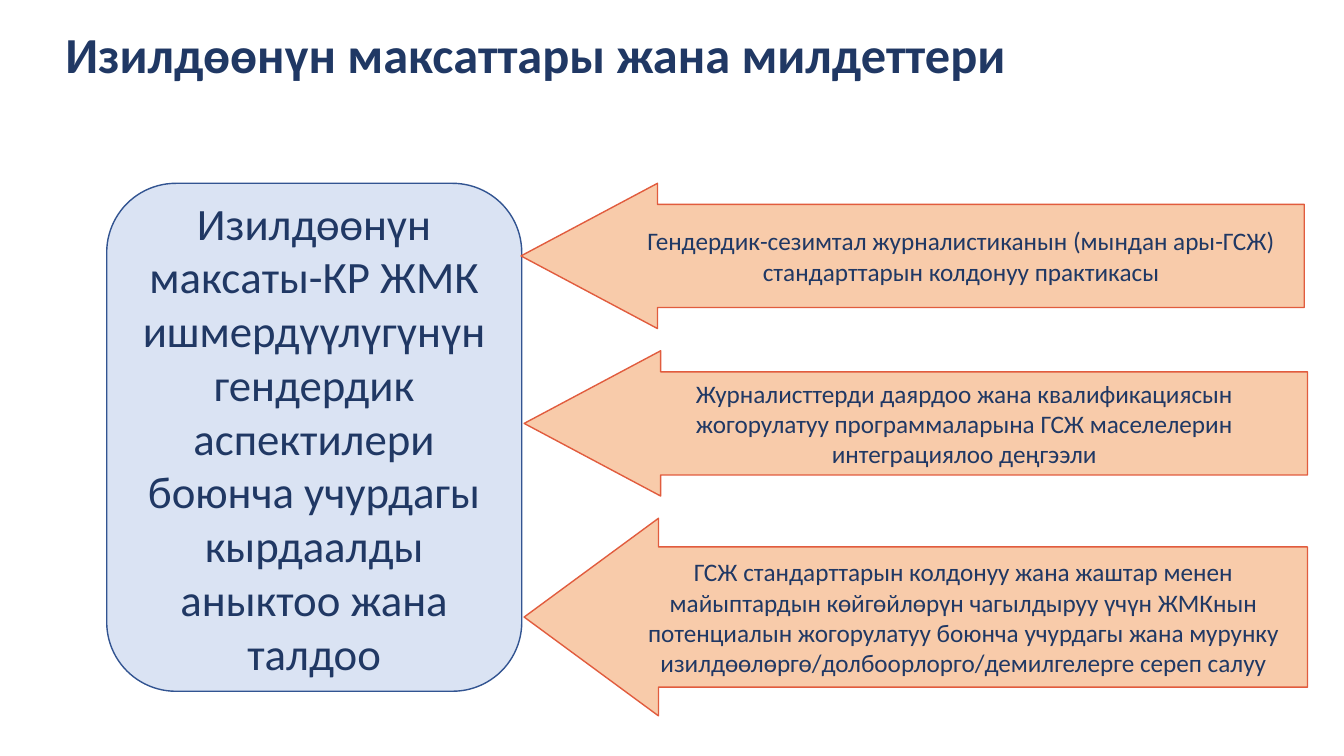
from pptx import Presentation
from pptx.dml.color import RGBColor
from pptx.enum.shapes import MSO_SHAPE
from pptx.enum.text import MSO_ANCHOR, MSO_AUTO_SIZE, PP_ALIGN
from pptx.util import Cm, Pt

COLORS = {
    "text": "203864",
    "goal_fill": "DAE3F3",
    "goal_line": "325491",
    "task_fill": "F8CBAA",
    "task_line": "E15C3E",
}

TITLE = "Изилдөөнүн максаттары жана милдеттери"
GOAL = ("Изилдөөнүн максаты-КР ЖМК ишмердүүлүгүнүн гендердик аспектилери "
        "боюнча учурдагы кырдаалды аныктоо жана талдоо")

# Left edge (cm), height (cm), head length relative to height, text
TASKS = [
    (13.13, 3.66, 0.94,
     "Гендердик-сезимтал журналистиканын (мындан ары-ГСЖ) "
     "стандарттарын колдонуу практикасы"),
    (13.21, 3.66, 0.94,
     "Журналисттерди даярдоо жана квалификациясын жогорулатуу "
     "программаларына ГСЖ маселелерин интеграциялоо деңгээли"),
    (13.21, 4.98, 0.68,
     "ГСЖ стандарттарын колдонуу жана жаштар менен майыптардын "
     "көйгөйлөрүн чагылдыруу үчүн ЖМКнын потенциалын жогорулатуу боюнча "
     "учурдагы жана мурунку изилдөөлөргө/долбоорлорго/демилгелерге "
     "сереп салуу"),
]
TOP = 4.62
TASK_WIDTH = 19.74
TASK_GAP = 0.56
SHAFT = 0.71


def color(name):
    return RGBColor.from_string(COLORS[name])


def set_text(tf, text, size, bold=False, align=PP_ALIGN.LEFT):
    tf.word_wrap = True
    tf.text = text
    p = tf.paragraphs[0]
    p.alignment = align
    font = p.runs[0].font
    font.name = "Calibri"
    font.size = Pt(size)
    font.bold = bold
    font.color.rgb = color("text")


def add_title(s, text):
    tf = s.shapes.add_textbox(Cm(1.4), Cm(0.46), Cm(25.96), Cm(1.8)).text_frame
    set_text(tf, text, 36, bold=True)
    tf.auto_size = MSO_AUTO_SIZE.SHAPE_TO_FIT_TEXT


def add_block(s, kind, left, top, width, height, role, text, size):
    sp = s.shapes.add_shape(kind, Cm(left), Cm(top), Cm(width), Cm(height))
    sp.shadow.inherit = False
    sp.fill.solid()
    sp.fill.fore_color.rgb = color(role + "_fill")
    sp.line.color.rgb = color(role + "_line")
    sp.line.width = Pt(1)
    sp.text_frame.vertical_anchor = MSO_ANCHOR.MIDDLE
    set_text(sp.text_frame, text, size, align=PP_ALIGN.CENTER)
    return sp


def add_tasks(s):
    top = TOP
    for left, height, head, text in TASKS:
        arrow = add_block(s, MSO_SHAPE.LEFT_ARROW, left, top, TASK_WIDTH,
                          height, "task", text, 18)
        arrow.adjustments[0] = SHAFT
        arrow.adjustments[1] = head
        top += height + TASK_GAP


def main():
    prs = Presentation()
    prs.slide_width, prs.slide_height = Cm(33.87), Cm(19.05)
    s = prs.slides.add_slide(prs.slide_layouts[6])

    # Heading
    add_title(s, TITLE)

    # Goal on the left, tasks pointing at it
    add_block(s, MSO_SHAPE.ROUNDED_RECTANGLE, 2.69, TOP, 10.46, 12.8,
              "goal", GOAL, 32)
    add_tasks(s)

    prs.save("out.pptx")


if __name__ == "__main__":
    main()
